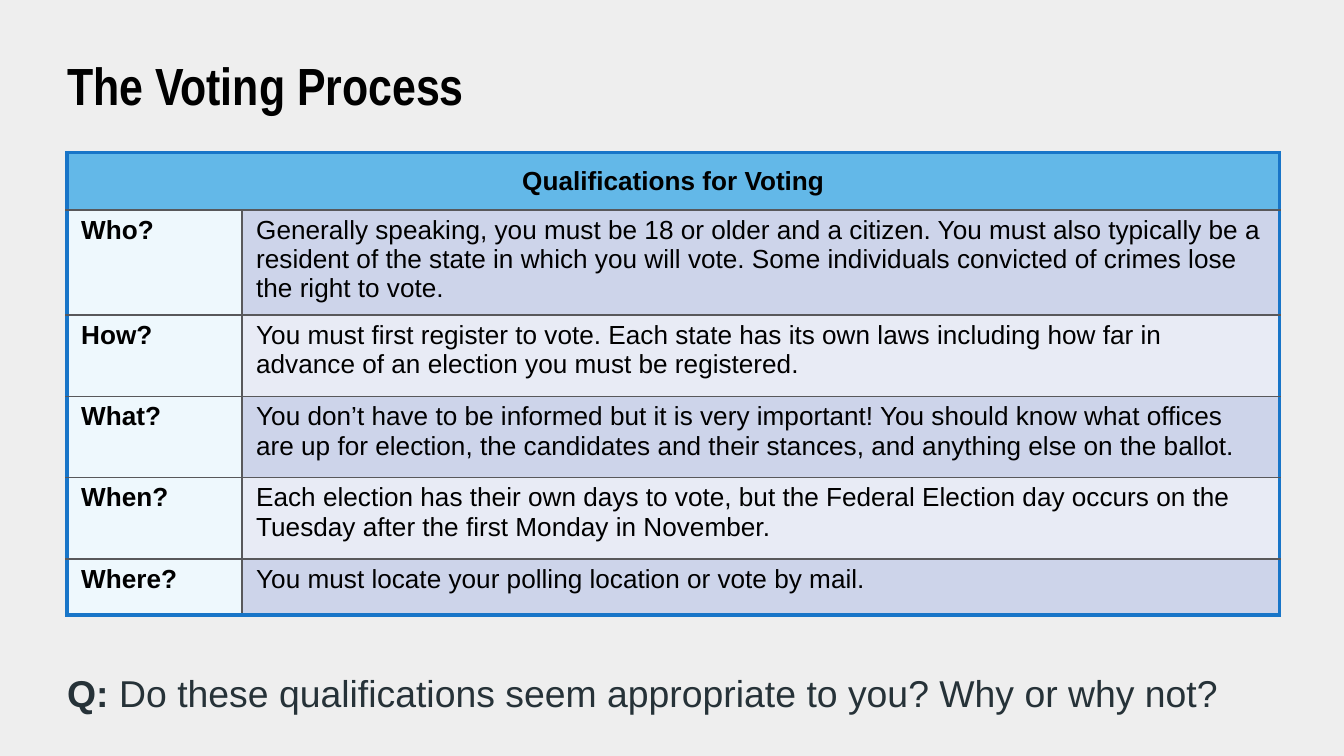
from lxml import etree
from pptx import Presentation
from pptx.dml.color import RGBColor
from pptx.enum.text import MSO_ANCHOR, PP_ALIGN
from pptx.oxml.ns import qn
from pptx.util import Pt

PX = 9525  # 96 px to the inch
SLIDE_W, SLIDE_H = 960, 540
TOP, MIDDLE = MSO_ANCHOR.TOP, MSO_ANCHOR.MIDDLE
LEFT, CENTER = PP_ALIGN.LEFT, PP_ALIGN.CENTER

BACKGROUND = RGBColor(0xEE, 0xEE, 0xEE)
BLACK = RGBColor(0x00, 0x00, 0x00)
SLATE = RGBColor(0x26, 0x32, 0x38)
HEADER_BLUE = RGBColor(0x63, 0xB8, 0xE8)
LABEL_BLUE = RGBColor(0xEE, 0xF8, 0xFD)
BANDS = (RGBColor(0xCD, 0xD4, 0xEA), RGBColor(0xE8, 0xEB, 0xF5))
FRAME = (RGBColor(0x18, 0x75, 0xC8), 2.25)
RULE = (RGBColor(0x58, 0x58, 0x5B), 1)

COLUMN_WIDTHS = (125, 741)
ROW_HEIGHTS = (41, 75, 58, 58, 58, 40)
QUALIFICATIONS = (
    ("Who?", "Generally speaking, you must be 18 or older and a citizen. "
             "You must also typically be a resident of the state in which you "
             "will vote. Some individuals convicted of crimes lose the right to vote."),
    ("How?", "You must first register to vote. Each state has its own laws "
             "including how far in advance of an election you must be registered."),
    ("What?", "You don’t have to be informed but it is very important! You should "
              "know what offices are up for election, the candidates and their "
              "stances, and anything else on the ballot."),
    ("When?", "Each election has their own days to vote, but the Federal Election "
              "day occurs on the Tuesday after the first Monday in November."),
    ("Where?", "You must locate your polling location or vote by mail."),
)


def px(length):
    return length * PX


def write(paragraph, text, size=14, font="Arial", color=BLACK, bold=False,
          align=LEFT, line_spacing=None):
    paragraph.alignment = align
    if line_spacing:
        paragraph.line_spacing = line_spacing
    run = paragraph.add_run()
    run.text = text
    run.font.size = Pt(size)
    run.font.name = font
    run.font.bold = bold
    run.font.color.rgb = color


def add_text_frame(slide, box, inset=0):
    frame = slide.shapes.add_textbox(*map(px, box)).text_frame
    frame.word_wrap = True
    frame.vertical_anchor = TOP
    frame.margin_left = frame.margin_right = 0
    frame.margin_top = frame.margin_bottom = px(inset)
    return frame


def set_borders(cell, left, right, top, bottom):
    properties = cell._tc.get_or_add_tcPr()
    sides = zip(("a:lnL", "a:lnR", "a:lnT", "a:lnB"), (left, right, top, bottom))
    for position, (tag, (color, width)) in enumerate(sides):
        line = etree.Element(qn(tag), w=str(Pt(width)))
        fill = etree.SubElement(line, qn("a:solidFill"))
        etree.SubElement(fill, qn("a:srgbClr"), val=str(color))
        properties.insert(position, line)


def fill_cell(cell, text, fill, anchor=TOP, **text_format):
    cell.fill.solid()
    cell.fill.fore_color.rgb = fill
    cell.vertical_anchor = anchor
    cell.margin_left = cell.margin_right = px(10)
    cell.margin_top = cell.margin_bottom = px(4)
    write(cell.text_frame.paragraphs[0], text, **text_format)


def add_title(slide, box):
    title = add_text_frame(slide, box)
    write(title.paragraphs[0], "The Voting Process", size=28,
          font="Arial Narrow", bold=True, line_spacing=0.9)


def add_qualifications(slide, box):
    last_row, last_column = len(ROW_HEIGHTS) - 1, len(COLUMN_WIDTHS) - 1
    table = slide.shapes.add_table(last_row + 1, last_column + 1,
                                   *map(px, box)).table
    for column, width in zip(table.columns, COLUMN_WIDTHS):
        column.width = px(width)
    for row, height in zip(table.rows, ROW_HEIGHTS):
        row.height = px(height)

    # Header across both columns
    header = table.cell(0, 0)
    header.merge(table.cell(0, last_column))
    fill_cell(header, "Qualifications for Voting", HEADER_BLUE,
              anchor=MIDDLE, bold=True, align=CENTER)
    for column in range(last_column + 1):
        set_borders(table.cell(0, column), FRAME, FRAME, FRAME, RULE)

    # Question and answer rows
    for r, (question, answer) in enumerate(QUALIFICATIONS, start=1):
        bottom = FRAME if r == last_row else RULE
        label, detail = table.cell(r, 0), table.cell(r, 1)
        fill_cell(label, question, LABEL_BLUE, bold=True)
        fill_cell(detail, answer, BANDS[(r - 1) % 2])
        set_borders(label, FRAME, RULE, RULE, bottom)
        set_borders(detail, RULE, FRAME, RULE, bottom)


def add_discussion_question(slide, box):
    discussion = add_text_frame(slide, box, inset=5).paragraphs[0]
    write(discussion, "Q: ", size=20, color=SLATE, bold=True)
    write(discussion, "Do these qualifications seem appropriate to you? Why or why not?",
          size=20, color=SLATE)


def main():
    deck = Presentation()
    deck.slide_width, deck.slide_height = px(SLIDE_W), px(SLIDE_H)
    slide = deck.slides.add_slide(deck.slide_layouts[6])
    slide.background.fill.solid()
    slide.background.fill.fore_color.rgb = BACKGROUND

    add_title(slide, (48, 43, 816, 40))
    add_qualifications(slide, (48, 109, sum(COLUMN_WIDTHS), sum(ROW_HEIGHTS)))
    add_discussion_question(slide, (48, 474, 853, 42))
    deck.save("out.pptx")


if __name__ == "__main__":
    main()
